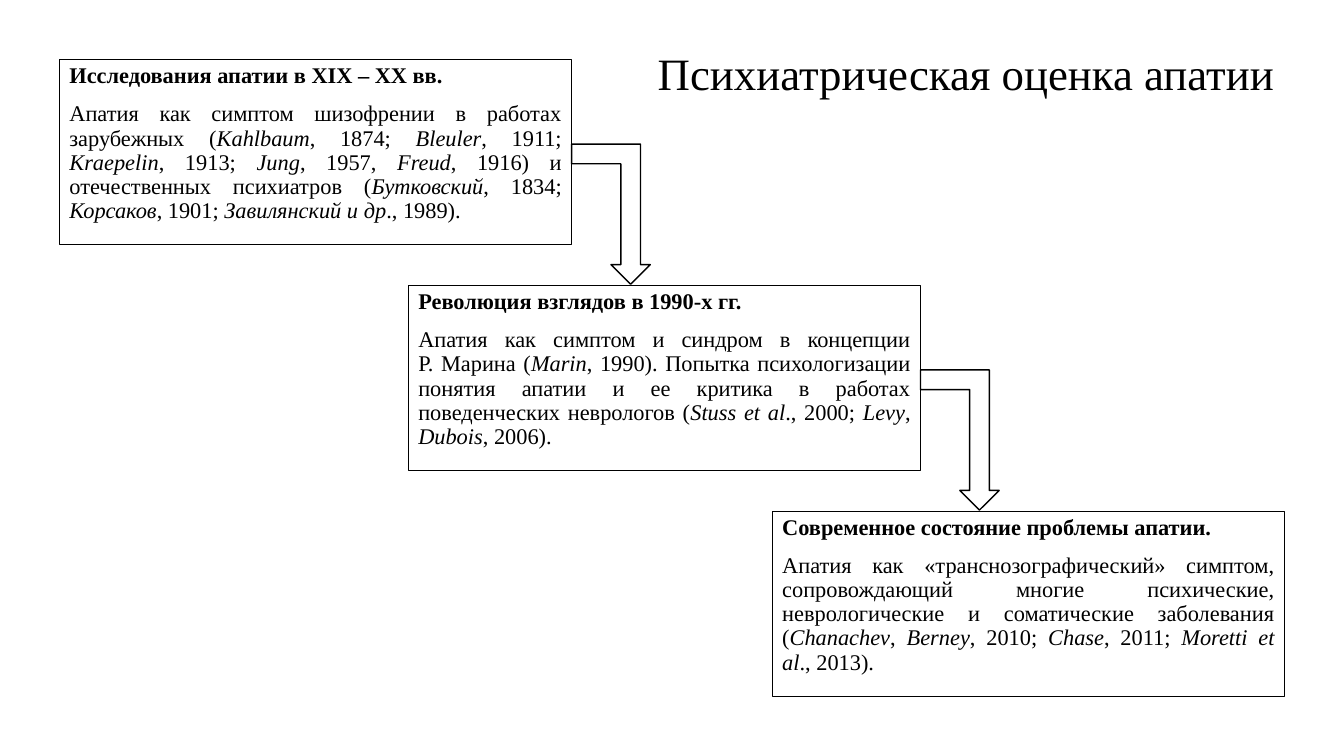
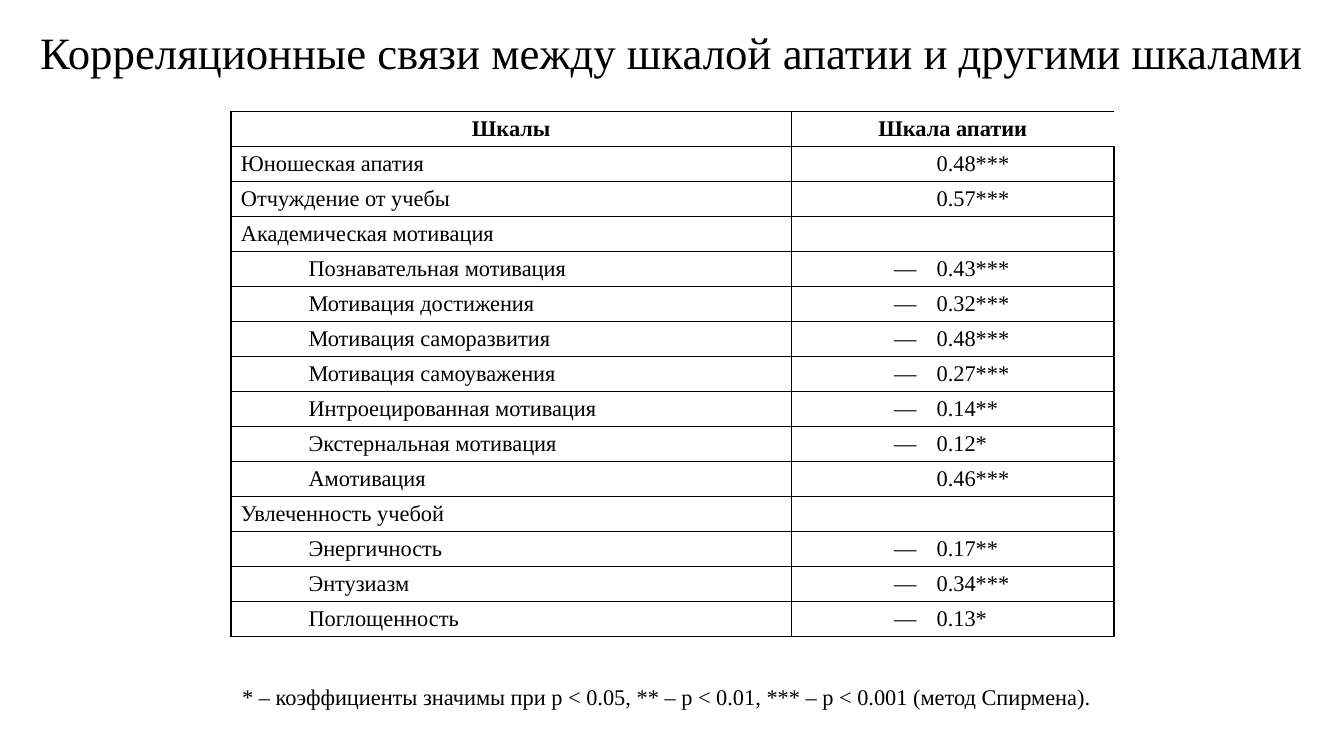
from dataclasses import dataclass

from lxml import etree
from pptx import Presentation
from pptx.dml.color import RGBColor
from pptx.enum.shapes import MSO_SHAPE as Shape
from pptx.enum.text import MSO_ANCHOR as Anchor, PP_ALIGN as Align
from pptx.oxml.ns import qn
from pptx.util import Inches, Pt


@dataclass(frozen=True)
class Theme:
    font: str = "Times New Roman"
    ink: RGBColor = RGBColor(0, 0, 0)
    paper: RGBColor = RGBColor(255, 255, 255)
    title_size: int = 32
    body_size: int = 16
    box_line: float = 0.75
    line: float = 1
    line_spacing: float = 0.9


theme = Theme()


def style_runs(paragraph, size=theme.body_size, bold=False):
    for run in paragraph.runs:
        run.font.name = theme.font
        run.font.size = Pt(size)
        run.font.bold = bold
        run.font.color.rgb = theme.ink


def add_line_of_text(slide, text, left, top, width, height, size, align):
    """Add a one-line text box that sits on its bottom edge."""
    frame = slide.shapes.add_textbox(
        Inches(left), Inches(top), Inches(width), Inches(height)).text_frame
    frame.word_wrap = True
    frame.vertical_anchor = Anchor.BOTTOM
    frame.text = text
    paragraph = frame.paragraphs[0]
    paragraph.alignment = align
    paragraph.line_spacing = theme.line_spacing
    style_runs(paragraph, size)


presentation = Presentation()
presentation.slide_width = Inches(13.33)
presentation.slide_height = Inches(7.5)
blank = presentation.slide_layouts[6]

# Slide 1: three stages going down the slide
slide = presentation.slides.add_slide(blank)
add_line_of_text(slide, "Психиатрическая оценка апатии",
                 6.11, 0.08, 6.63, 0.96, theme.title_size, Align.RIGHT)

# Left edge, heading and text; every second part between bars is italic
stages = [
    (0.59, "Исследования апатии в XIX – XX вв.",
     "Апатия как симптом шизофрении в работах зарубежных (|Kahlbaum|, 1874; "
     "|Bleuler|, 1911; |Kraepelin|, 1913; |Jung|, 1957, |Freud|, 1916) и "
     "отечественных психиатров (|Бутковский|, 1834; |Корсаков|, 1901; "
     "|Завилянский и др|., 1989)."),
    (4.05, "Революция взглядов в 1990-х гг.",
     "Апатия как симптом и синдром в концепции\vР. Марина (|Marin|, 1990). "
     "Попытка психологизации понятия апатии и ее критика в работах "
     "поведенческих неврологов (|Stuss et al|., 2000; |Levy|, |Dubois|, 2006)."),
    (7.66, "Современное состояние проблемы апатии.",
     "Апатия как «транснозографический» симптом, сопровождающий многие "
     "психические, неврологические и соматические заболевания (|Chanachev|, "
     "|Berney|, 2010; |Chase|, 2011; |Moretti et al|., 2013)."),
]
first_top, stage_pitch = 0.59, 2.24
box_width, box_height = 5.08, 1.84
arrow_drop, arrow_width, arrow_height = 0.84, 0.78, 1.39

for index, (left, heading, text) in enumerate(stages):
    top = first_top + index * stage_pitch
    box = slide.shapes.add_shape(Shape.RECTANGLE, Inches(left), Inches(top),
                                 Inches(box_width), Inches(box_height))
    box.shadow.inherit = False
    box.fill.background()
    box.line.color.rgb = theme.ink
    box.line.width = Pt(theme.box_line)

    frame = box.text_frame
    frame.word_wrap = True
    frame.vertical_anchor = Anchor.TOP
    frame.text = heading
    body = frame.add_paragraph()
    for part_index, part in enumerate(text.split("|")):
        # Line breaks belong to the paragraph, between its runs
        for line_index, line in enumerate(part.split("\v")):
            if line_index:
                body.add_line_break()
            run = body.add_run()
            run.text = line
            run.font.italic = part_index % 2 == 1
    for paragraph in frame.paragraphs:
        paragraph.alignment = Align.JUSTIFY
        paragraph.line_spacing = theme.line_spacing
        paragraph.space_before = Pt(10)
        style_runs(paragraph, bold=paragraph.text == heading)

    if index < len(stages) - 1:
        arrow = slide.shapes.add_shape(
            Shape.BENT_UP_ARROW, Inches(left + box_width), Inches(top + arrow_drop),
            Inches(arrow_width), Inches(arrow_height))
        arrow._element.spPr.find(qn("a:xfrm")).set("flipV", "1")
        arrow.shadow.inherit = False
        arrow.fill.solid()
        arrow.fill.fore_color.rgb = theme.paper
        arrow.line.color.rgb = theme.ink
        arrow.line.width = Pt(theme.line)

# Slide 2: correlation table
slide = presentation.slides.add_slide(blank)
add_line_of_text(slide, "Корреляционные связи между шкалой апатии и другими шкалами",
                 0, 0.11, 13.33, 0.72, theme.title_size, Align.CENTER)

# Indent level, scale, sign, coefficient
rows = [
    (0, "Шкалы", "Шкала апатии", ""),
    (0, "Юношеская апатия", "", "0.48***"),
    (0, "Отчуждение от учебы", "", "0.57***"),
    (0, "Академическая мотивация", "", ""),
    (1, "Познавательная мотивация", "—", "0.43***"),
    (1, "Мотивация достижения", "—", "0.32***"),
    (1, "Мотивация саморазвития", "—", "0.48***"),
    (1, "Мотивация самоуважения", "—", "0.27***"),
    (1, "Интроецированная мотивация", "—", "0.14**"),
    (1, "Экстернальная мотивация", "—", "0.12*"),
    (1, "Амотивация", "", "0.46***"),
    (0, "Увлеченность учебой", "", ""),
    (1, "Энергичность", "—", "0.17**"),
    (1, "Энтузиазм", "—", "0.34***"),
    (1, "Поглощенность", "—", "0.13*"),
]
column_widths = [5.56, 1.34, 1.86]
column_aligns = [Align.LEFT, Align.RIGHT, Align.LEFT]
table_height = 5.21

table = slide.shapes.add_table(
    len(rows), len(column_widths), Inches(2.29), Inches(1.11),
    Inches(sum(column_widths)), Inches(table_height)).table
table.first_row = False
table.horz_banding = False
for column, width in zip(table.columns, column_widths):
    column.width = Inches(width)

for row_index, (level, *texts) in enumerate(rows):
    is_header = row_index == 0
    table.rows[row_index].height = Inches(table_height / len(rows))
    for column_index, text in enumerate(texts):
        cell = table.cell(row_index, column_index)
        cell.margin_top = cell.margin_bottom = 0
        cell.vertical_anchor = Anchor.MIDDLE
        if text:
            cell.text_frame.text = text
            paragraph = cell.text_frame.paragraphs[0]
            paragraph.alignment = Align.CENTER if is_header else column_aligns[column_index]
            if level and column_index == 0:
                paragraph._p.get_or_add_pPr().set("marL", str(Inches(0.67)))
            style_runs(paragraph, bold=is_header)

        # The sign and its coefficient share one framed field
        open_side = {1: "lnR", 2: "lnL"}.get(column_index)
        properties = cell._tc.get_or_add_tcPr()
        for side in ("lnL", "lnR", "lnT", "lnB"):
            border = etree.SubElement(properties, qn(f"a:{side}"), w=str(Pt(theme.line)))
            if side == open_side:
                etree.SubElement(border, qn("a:noFill"))
            else:
                fill = etree.SubElement(border, qn("a:solidFill"))
                etree.SubElement(fill, qn("a:srgbClr"), val=str(theme.ink))
        cell.fill.background()
table.cell(0, 1).merge(table.cell(0, 2))

add_line_of_text(
    slide, "* – коэффициенты значимы при p < 0.05, ** – p < 0.01, *** – p < 0.001 (метод Спирмена).",
    2.23, 6.69, 8.76, 0.41, theme.body_size, Align.CENTER)

presentation.save("out.pptx")
